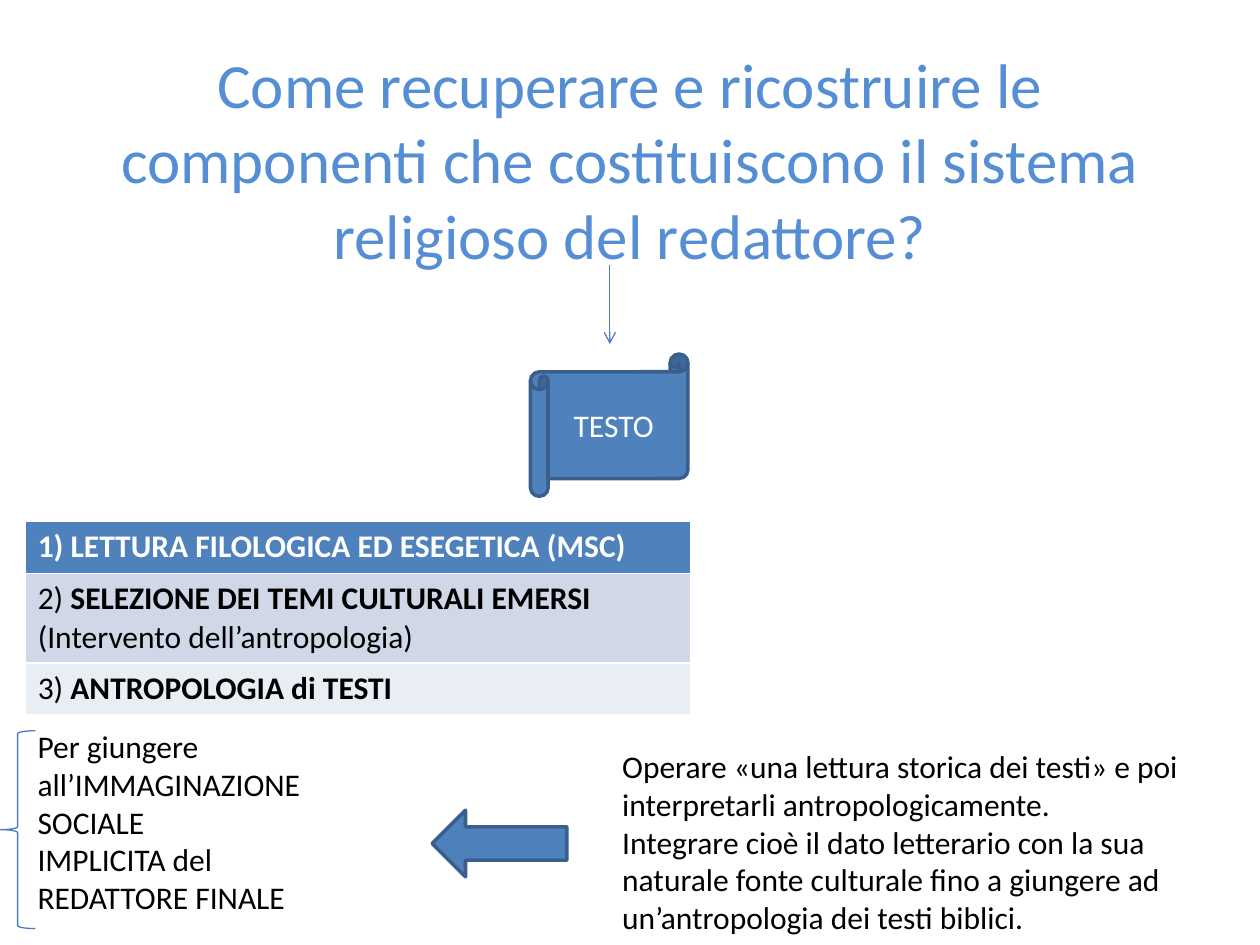
from dataclasses import dataclass

from lxml.etree import SubElement
from pptx import Presentation
from pptx.dml.color import RGBColor
from pptx.enum.shapes import MSO_CONNECTOR, MSO_SHAPE
from pptx.enum.text import MSO_ANCHOR, PP_ALIGN
from pptx.oxml.ns import qn
from pptx.util import Inches, Pt

FONT = "Calibri"
BLACK = RGBColor(0x00, 0x00, 0x00)
WHITE = RGBColor(0xFF, 0xFF, 0xFF)
TITLE_BLUE = RGBColor(0x55, 0x8E, 0xD5)
BLUE = RGBColor(0x4F, 0x81, 0xBD)
DARK_BLUE = RGBColor(0x3A, 0x5F, 0x8C)
LINE_BLUE = RGBColor(0x4B, 0x7E, 0xBC)
BAND_DARK = RGBColor(0xD0, 0xD8, 0xE8)
BAND_LIGHT = RGBColor(0xE9, 0xED, 0xF4)


@dataclass
class Box:
    left: float
    top: float
    width: float
    height: float

    def emu(self) -> tuple:
        return tuple(Inches(v) for v in (self.left, self.top, self.width, self.height))


@dataclass
class Step:
    paragraphs: list
    fill: RGBColor
    color: RGBColor
    height: float


@dataclass
class Note:
    box: Box
    paragraphs: list


STEPS = [
    Step([[("1) LETTURA FILOLOGICA ED ESEGETICA (MSC)", True)]], BLUE, WHITE, 0.41),
    Step(
        [
            [("2) ", False), ("SELEZIONE DEI TEMI CULTURALI EMERSI", True)],
            [("(Intervento dell’antropologia)", False)],
        ],
        BAND_DARK, BLACK, 0.69,
    ),
    Step([[("3) ", False), ("ANTROPOLOGIA di TESTI", True)]], BAND_LIGHT, BLACK, 0.41),
]

NOTES = [
    Note(Box(4.84, 5.88, 5, 1.62), [
        "Operare «una lettura storica dei testi» e poi interpretarli antropologicamente.",
        "Integrare cioè il dato letterario con la sua naturale fonte culturale "
        "fino a giungere ad un’antropologia dei testi biblici.",
    ]),
    Note(Box(0.2, 5.72, 2.44, 1.62), [
        "Per giungere all’IMMAGINAZIONE SOCIALE",
        "IMPLICITA del REDATTORE FINALE",
    ]),
]


def set_font(p, size: float, color: RGBColor) -> None:
    p.font.name = FONT
    p.font.size = Pt(size)
    p.font.color.rgb = color


def add_title(s, text: str, box: Box) -> None:
    sp = s.shapes.title
    sp.left, sp.top, sp.width, sp.height = box.emu()
    tf = sp.text_frame
    tf.word_wrap = True
    tf.vertical_anchor = MSO_ANCHOR.MIDDLE
    p = tf.paragraphs[0]
    p.text = text
    p.alignment = PP_ALIGN.CENTER
    set_font(p, 36, TITLE_BLUE)


def add_solid(s, kind: MSO_SHAPE, box: Box, text: str = "") -> None:
    sp = s.shapes.add_shape(kind, *box.emu())
    sp.shadow.inherit = False
    sp.fill.solid()
    sp.fill.fore_color.rgb = BLUE
    sp.line.color.rgb = DARK_BLUE
    sp.line.width = Pt(2)
    if text:
        sp.text_frame.vertical_anchor = MSO_ANCHOR.MIDDLE
        p = sp.text_frame.paragraphs[0]
        p.text = text
        p.alignment = PP_ALIGN.CENTER
        set_font(p, 18, WHITE)


def add_brace(s, box: Box) -> None:
    sp = s.shapes.add_shape(MSO_SHAPE.LEFT_BRACE, *box.emu())
    sp.shadow.inherit = False
    sp.fill.background()
    sp.line.color.rgb = LINE_BLUE
    sp.line.width = Pt(0.75)


def add_down_arrow(s, x: float, top: float, bottom: float) -> None:
    line = s.shapes.add_connector(
        MSO_CONNECTOR.STRAIGHT, Inches(x), Inches(top), Inches(x), Inches(bottom)
    )
    line.line.color.rgb = LINE_BLUE
    line.line.width = Pt(0.75)
    SubElement(line.line._get_or_add_ln(), qn("a:tailEnd"), type="arrow")
    SubElement(line._element.spPr, qn("a:effectLst"))


def add_steps(s, steps: list, left: float, top: float, width: float) -> None:
    box = Box(left, top, width, sum(step.height for step in steps))
    table = s.shapes.add_table(len(steps), 1, *box.emu()).table
    for row, step in zip(table.rows, steps):
        row.height = Inches(step.height)
        cell = row.cells[0]
        cell.fill.solid()
        cell.fill.fore_color.rgb = step.fill
        tf = cell.text_frame
        for i, runs in enumerate(step.paragraphs):
            p = tf.add_paragraph() if i else tf.paragraphs[0]
            set_font(p, 18, step.color)
            for text, bold in runs:
                r = p.add_run()
                r.text = text
                r.font.name = FONT
                r.font.size = Pt(18)
                r.font.color.rgb = step.color
                r.font.bold = bold


def add_note(s, note: Note) -> None:
    tf = s.shapes.add_textbox(*note.box.emu()).text_frame
    tf.word_wrap = True
    for i, text in enumerate(note.paragraphs):
        p = tf.add_paragraph() if i else tf.paragraphs[0]
        p.text = text
        set_font(p, 18, BLACK)


def main() -> None:
    prs = Presentation()
    prs.slide_width, prs.slide_height = Inches(10), Inches(7.5)
    s = prs.slides.add_slide(prs.slide_layouts[5])
    add_title(
        s,
        "Come recuperare e ricostruire le componenti che costituiscono "
        "il sistema religioso del redattore?",
        Box(0.5, 0.3, 9, 1.92),
    )
    add_solid(s, MSO_SHAPE.HORIZONTAL_SCROLL, Box(4.21, 2.81, 1.25, 1.13), "TESTO")
    add_down_arrow(s, 4.84, 2.1, 2.73)
    add_steps(s, STEPS, 0.2, 4.14, 5.28)
    for note in NOTES:
        add_note(s, note)
    add_solid(s, MSO_SHAPE.LEFT_ARROW, Box(3.43, 6.43, 1.07, 0.53))
    add_brace(s, Box(0, 5.8, 0.28, 1.57))
    prs.save("out.pptx")


if __name__ == "__main__":
    main()
